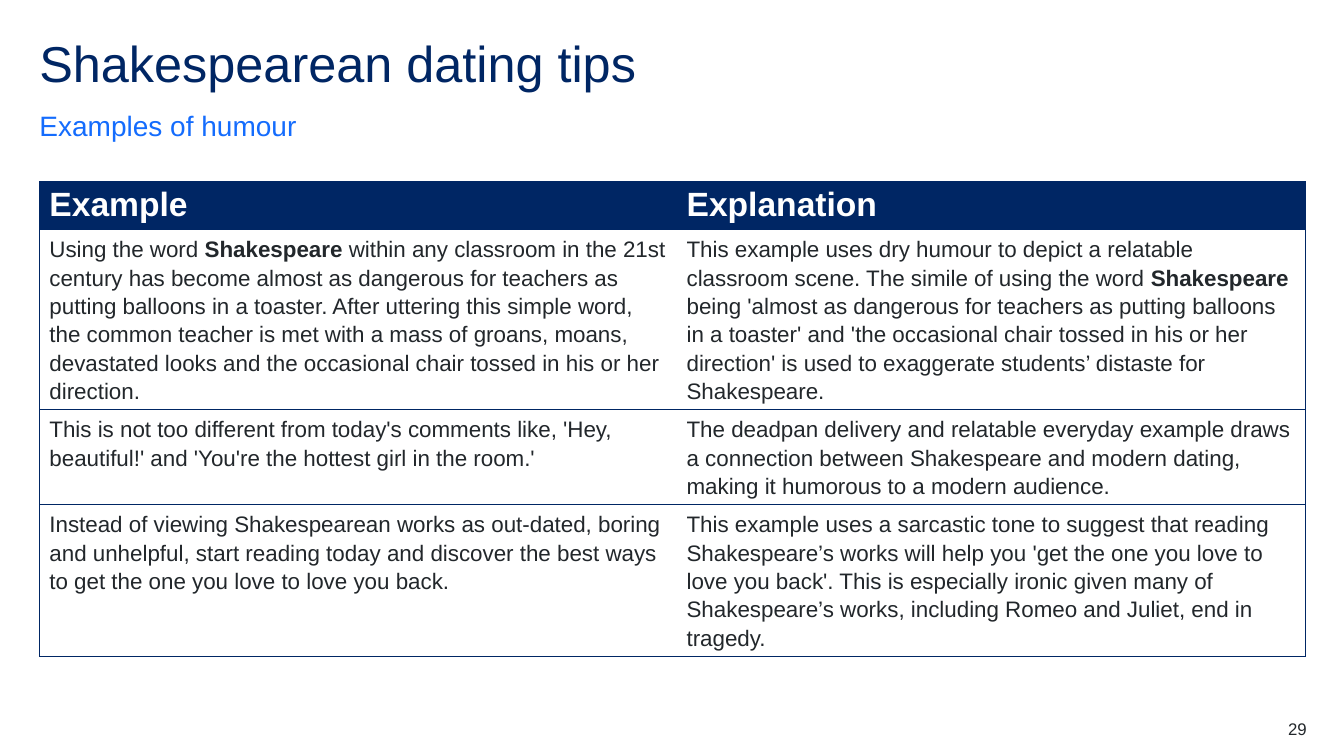
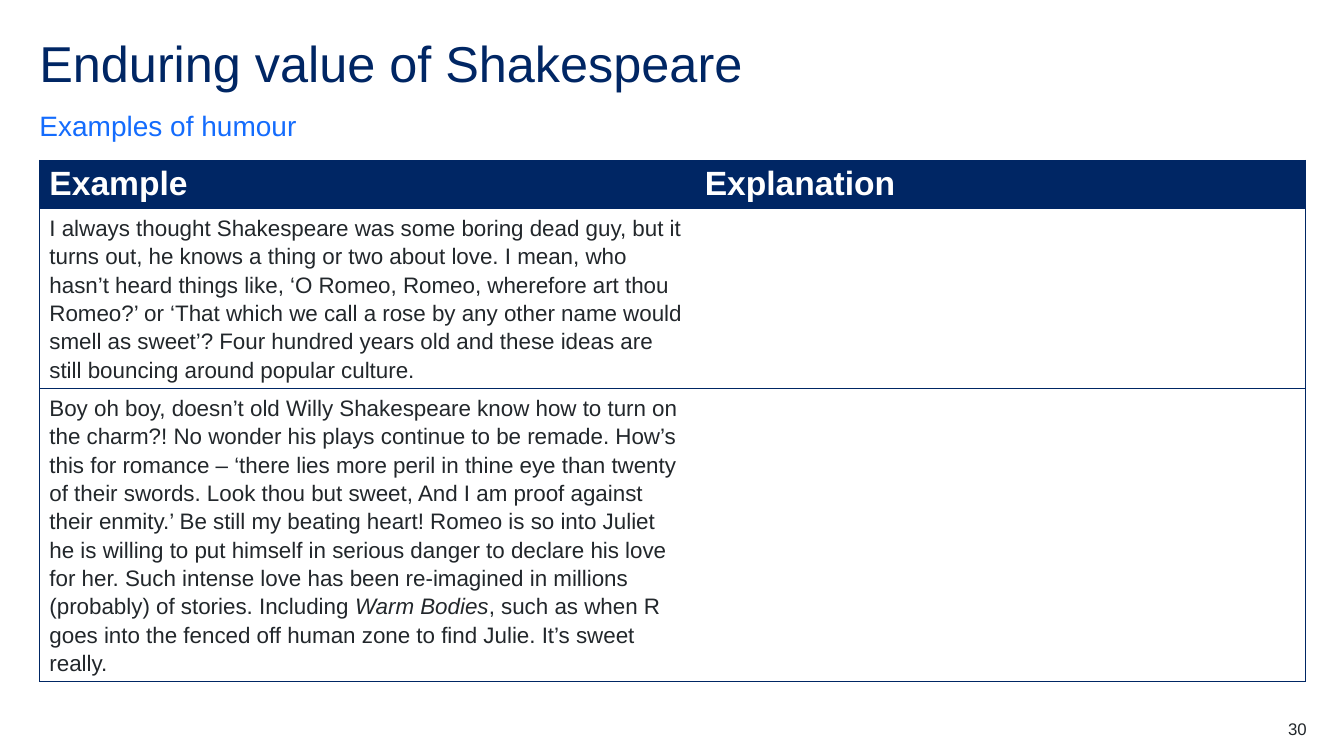
"""Build two slides of tables on humour in writing about Shakespeare."""
import dataclasses

import pptx
import pptx.dml.color
import pptx.enum.text
import pptx.oxml
import pptx.oxml.ns
import pptx.util

Inches = pptx.util.Inches
Pt = pptx.util.Pt
Align = pptx.enum.text.PP_ALIGN
Anchor = pptx.enum.text.MSO_ANCHOR


@dataclasses.dataclass(frozen=True)
class Theme:
    font: str = "Arial"
    navy: str = "002664"
    blue: str = "146CFD"
    ink: str = "22272B"
    white: str = "FFFFFF"
    title: int = 36
    lead: int = 20
    head: int = 24
    text: int = 16
    foot: int = 12
    left: float = 0.39
    width: float = 12.56


class Deck:
    def __init__(self, theme):
        self.theme = theme
        self.show = pptx.Presentation()
        self.show.slide_width = Inches(13.33)
        self.show.slide_height = Inches(7.5)
        self.slide = None

    def apply(self, item, values):
        for name, value in values.items():
            setattr(item, name, value)

    def label(self, frame, parts, size, color, bold=False, **form):
        para = frame.paragraphs[0]
        self.apply(para, {"alignment": Align.LEFT, **form})
        for text, style in parts:
            run = para.add_run()
            run.text = text
            look = {"name": self.theme.font, "size": Pt(size), "bold": bold}
            self.apply(run.font, {**look, **style})
            run.font.color.rgb = pptx.dml.color.RGBColor.from_string(color)
        return para

    def place(self, shape, left, top, width, height, anchor=Anchor.TOP):
        box = {"left": left, "top": top, "width": width, "height": height}
        self.apply(shape, {key: Inches(value) for key, value in box.items()})
        frame = shape.text_frame
        sides = ("left", "top", "right", "bottom")
        self.apply(frame, {f"margin_{side}": 0 for side in sides})
        self.apply(frame, {
            "word_wrap": True,
            "auto_size": pptx.enum.text.MSO_AUTO_SIZE.NONE,
            "vertical_anchor": anchor,
        })
        return frame

    def start(self, title, lead, number):
        look = self.theme
        self.slide = self.show.slides.add_slide(self.show.slide_layouts[1])
        self.title(title)
        self.lead(lead)
        box = self.slide.shapes.add_textbox(0, 0, 0, 0)
        frame = self.place(box, 12.17, 7.13, 0.79, 0.2)
        self.label(frame, [(number, {})], look.foot, look.ink,
                   alignment=Align.RIGHT)

    def title(self, text):
        look = self.theme
        frame = self.place(self.slide.shapes.title, look.left, 0.39,
                           look.width, 0.6)
        self.label(frame, [(text, {})], look.title, look.navy,
                   line_spacing=0.9)

    def lead(self, text):
        look = self.theme
        frame = self.place(self.slide.placeholders[1], look.left, 1.07,
                           look.width, 0.34, Anchor.BOTTOM)
        para = self.label(frame, [(text, {})], look.lead, look.blue,
                          line_spacing=1.5, space_before=Pt(0),
                          space_after=Pt(12))
        props = para._p.get_or_add_pPr()
        for name in ("marL", "indent"):
            props.set(name, "0")
        props.append(pptx.oxml.parse_xml(
            f'<a:buNone {pptx.oxml.ns.nsdecls("a")}/>'))

    def edge(self, cell, side, drawn):
        fill = "<a:noFill/>"
        if drawn:
            fill = (f'<a:solidFill><a:srgbClr val="{self.theme.navy}"/>'
                    "</a:solidFill>")
        cell._tc.get_or_add_tcPr().append(pptx.oxml.parse_xml(
            f'<a:ln{side} {pptx.oxml.ns.nsdecls("a")} w="{Pt(0.5)}">'
            f"{fill}</a:ln{side}>"))

    def table(self, top, widths, heights, rows):
        look = self.theme
        rows = [[[("Example", {})], [("Explanation", {})]], *rows]
        table = self.slide.shapes.add_table(
            len(rows), len(widths), Inches(look.left), Inches(top),
            Inches(sum(widths)), Inches(sum(heights))).table
        table.horz_banding = False
        for col, width in zip(table.columns, widths):
            col.width = Inches(width)
        for row, height in zip(table.rows, heights):
            row.height = Inches(height)
        for y, row in enumerate(rows):
            for x, parts in enumerate(row):
                cell = table.cell(y, x)
                for side in "LRTB":
                    inner = (side, x) in (("R", 0), ("L", 1))
                    self.edge(cell, side, not inner)
                if y == 0:
                    cell.fill.solid()
                    cell.fill.fore_color.rgb = (
                        pptx.dml.color.RGBColor.from_string(look.navy))
                    self.label(cell.text_frame, parts, look.head,
                               look.white, bold=True)
                else:
                    cell.fill.background()
                    self.label(cell.text_frame, parts, look.text, look.ink,
                               line_spacing=1.14)


BOLD = {"bold": True}
TIPS = [
    [
        [("Using the word ", {}), ("Shakespeare", BOLD),
         (" within any classroom in the 21st century has become almost as "
          "dangerous for teachers as putting balloons in a toaster. After "
          "uttering this simple word, the common teacher is met with a mass "
          "of groans, moans, devastated looks and the occasional chair "
          "tossed in his or her direction.", {})],
        [("This example uses dry humour to depict a relatable classroom "
          "scene. The simile of using the word ", {}), ("Shakespeare", BOLD),
         (" being 'almost as dangerous for teachers as putting balloons in "
          "a toaster' and 'the occasional chair tossed in his or her "
          "direction' is used to exaggerate students’ distaste for "
          "Shakespeare.", {})],
    ],
    [
        [("This is not too different from today's comments like, 'Hey, "
          "beautiful!' and 'You're the hottest girl in the room.'", {})],
        [("The deadpan delivery and relatable everyday example draws a "
          "connection between Shakespeare and modern dating, making it "
          "humorous to a modern audience.", {})],
    ],
    [
        [("Instead of viewing Shakespearean works as out-dated, boring and "
          "unhelpful, start reading today and discover the best ways to get "
          "the one you love to love you back.", {})],
        [("This example uses a sarcastic tone to suggest that reading "
          "Shakespeare’s works will help you 'get the one you love to love "
          "you back'. This is especially ironic given many of Shakespeare’s "
          "works, including Romeo and Juliet, end in tragedy.", {})],
    ],
]
VALUE = [
    [
        [("I always thought Shakespeare was some boring dead guy, but it "
          "turns out, he knows a thing or two about love. I mean, who "
          "hasn’t heard things like, ‘O Romeo, Romeo, wherefore art thou "
          "Romeo?’ or ‘That which we call a rose by any other name would "
          "smell as sweet’? Four hundred years old and these ideas are "
          "still bouncing around popular culture.", {})],
        [],
    ],
    [
        [("Boy oh boy, doesn’t old Willy Shakespeare know how to turn on "
          "the charm?! No wonder his plays continue to be remade. How’s "
          "this for romance – ‘there lies more peril in thine eye than "
          "twenty of their swords. Look thou but sweet, And I am proof "
          "against their enmity.’ Be still my beating heart! Romeo is so "
          "into Juliet he is willing to put himself in serious danger to "
          "declare his love for her. Such intense love has been re-imagined "
          "in millions (probably) of stories. Including ", {}),
         ("Warm Bodies", {"italic": True}),
         (", such as when R goes into the fenced off human zone to find "
          "Julie. It’s sweet really.", {})],
        [],
    ],
]


def main():
    deck = Deck(Theme())
    lead = "Examples of humour"
    deck.start("Shakespearean dating tips", lead, "29")
    deck.table(1.8, (6.32, 6.24), (0.47, 1.78, 0.94, 1.5), TIPS)
    deck.start("Enduring value of Shakespeare", lead, "30")
    deck.table(1.59, (6.5, 6.06), (0.47, 1.78, 2.91), VALUE)
    deck.show.save("out.pptx")


if __name__ == "__main__":
    main()
